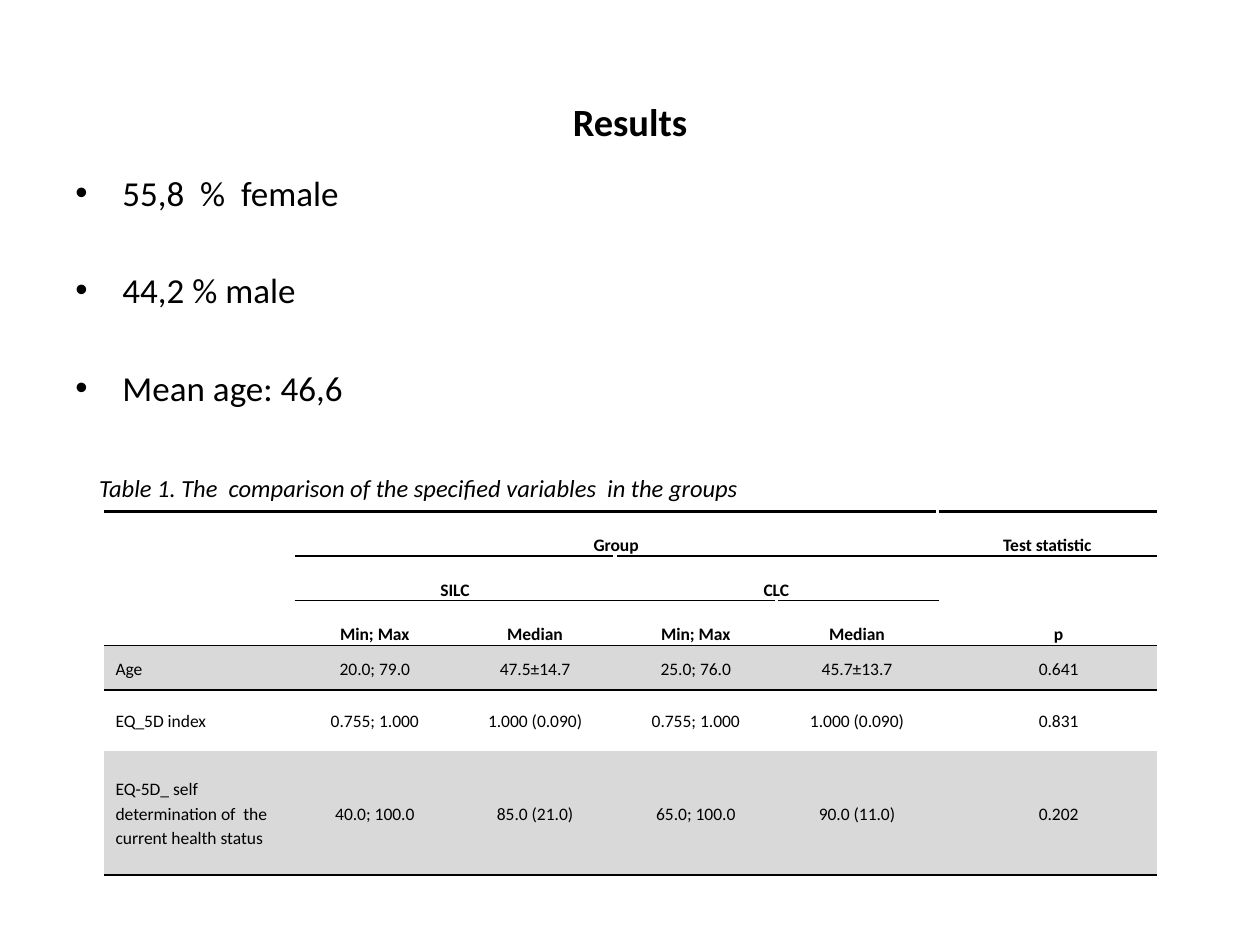
from lxml import etree
from pptx import Presentation
from pptx import util as u
from pptx.dml.color import RGBColor
from pptx.enum import text
from pptx.oxml.ns import qn

THEME = {
    "font": "Calibri",
    "ink": RGBColor.from_string("000000"),
    "band": RGBColor.from_string("D9D9D9"),
    "line": "000000",
    "gap": "FFFFFF",
    "title": u.Pt(22),
    "body": u.Pt(20),
    "caption": u.Pt(14),
    "cell": u.Pt(10),
}
NO_GRID_STYLE = "{2D5ABB26-0587-4C30-8999-92F81FD0307C}"

TITLE = "Results"
BULLETS = ["55,8  %  female", "44,2 % male", "Mean age: 46,6"]
CAPTION = "Table 1. The  comparison of the specified variables  in the groups"
ROWS = [
    ["", "Group", "", "", "", "Test statistic", ""],
    ["", "SILC", "", "CLC", "", "", "p"],
    ["", "Min; Max", "Median", "Min; Max", "Median", "", ""],
    ["Age", "20.0; 79.0", "47.5±14.7", "25.0; 76.0", "45.7±13.7", "", "0.641"],
    ["EQ_5D index", "0.755; 1.000", "1.000 (0.090)", "0.755; 1.000",
     "1.000 (0.090)", "", "0.831"],
    ["EQ-5D_ self determination of  the current health status", "40.0; 100.0",
     "85.0 (21.0)", "65.0; 100.0", "90.0 (11.0)", "", "0.202"],
]
HEADER_ROWS = 3
COLUMN_WIDTHS = [3.84, 3.23, 3.23, 3.25, 3.25, 0.46, 3.96]
ROW_HEIGHTS = [0.9, 0.9, 0.9, 0.9, 1.22, 2.51]
MERGES = [((0, 0), (2, 0)), ((0, 1), (0, 4)), ((0, 5), (0, 6)),
          ((1, 1), (1, 2)), ((1, 3), (1, 4)), ((1, 5), (2, 5)), ((1, 6), (2, 6))]
HORIZONTAL_RULES = [(0, 0, 6, 1.5), (1, 1, 6, 1), (2, 1, 4, 1), (3, 0, 6, 1), (6, 0, 6, 1.5)]
VERTICAL_GAPS = [(3, 1, 2, 2.25), (5, 0, 2, 2.25)]
BORDER_ORDER = ["lnL", "lnR", "lnT", "lnB"]


def apply(target, **values):
    for name, value in values.items():
        setattr(target, name, value)


def write(paragraph, words, size, bold=False, italic=False):
    run = paragraph.add_run()
    run.text = words
    apply(run.font, name=THEME["font"], size=size, bold=bold, italic=italic)
    run.font.color.rgb = THEME["ink"]


def indent(paragraph, left, first=0.0):
    properties = paragraph._p.get_or_add_pPr()
    properties.set("marL", str(u.Cm(left)))
    properties.set("indent", str(u.Cm(first)))
    return properties


def place(shape, left, top, width, height):
    apply(shape, left=u.Cm(left), top=u.Cm(top), width=u.Cm(width), height=u.Cm(height))


def add_title(slide):
    title = slide.shapes.title
    place(title, 1.27, 1.96, 22.86, 0.97)
    apply(title.text_frame, vertical_anchor=text.MSO_ANCHOR.MIDDLE,
          auto_size=text.MSO_AUTO_SIZE.NONE, word_wrap=True)
    paragraph = title.text_frame.paragraphs[0]
    paragraph.alignment = text.PP_ALIGN.CENTER
    write(paragraph, TITLE, THEME["title"], bold=True)


def add_body(slide):
    box = slide.shapes.add_textbox(u.Cm(1.27), u.Cm(3.33), u.Cm(22.86), u.Cm(15.39))
    frame = box.text_frame
    frame.word_wrap = True
    for index, words in enumerate(BULLETS):
        paragraph = frame.add_paragraph() if index else frame.paragraphs[0]
        paragraph.space_before = u.Pt(31.6 if index else 0)
        properties = indent(paragraph, 0.95, -0.95)
        etree.SubElement(properties, qn("a:buFont"), typeface="Arial")
        etree.SubElement(properties, qn("a:buChar"), char="•")
        write(paragraph, words, THEME["body"])
    caption = frame.add_paragraph()
    caption.space_before = u.Pt(37)
    indent(caption, 0.48)
    write(caption, CAPTION, THEME["caption"], italic=True)


def collect_borders():
    borders = {}
    last_row, last_column = len(ROWS), len(COLUMN_WIDTHS)
    for column, first, last, width in VERTICAL_GAPS:
        for row in range(first, last + 1):
            borders[row, column - 1, "lnR"] = borders[row, column, "lnL"] = (THEME["gap"], width)
    for edge, first, last, width in HORIZONTAL_RULES:
        for column in range(first, min(last + 1, last_column)):
            if edge < last_row:
                borders[edge, column, "lnT"] = (THEME["line"], width)
            if edge > 0:
                borders[edge - 1, column, "lnB"] = (THEME["line"], width)
    return borders


def draw_border(cell, side, color, width):
    properties = cell._tc.get_or_add_tcPr()
    line = etree.Element(qn("a:" + side), w=str(u.Pt(width)))
    fill = etree.SubElement(line, qn("a:solidFill"))
    etree.SubElement(fill, qn("a:srgbClr"), val=color)
    position = sum(child.tag in [qn("a:" + name) for name in BORDER_ORDER]
                   for child in properties)
    properties.insert(position, line)


def fill_cell(cell, row, column, words):
    header = row < HEADER_ROWS
    apply(cell, margin_left=u.Cm(0.18), margin_right=u.Cm(0.18), margin_top=0, margin_bottom=0,
          vertical_anchor=text.MSO_ANCHOR.BOTTOM if header else text.MSO_ANCHOR.MIDDLE)
    if not header and (row - HEADER_ROWS) % 2 == 0:
        cell.fill.solid()
        cell.fill.fore_color.rgb = THEME["band"]
    else:
        cell.fill.background()
    paragraph = cell.text_frame.paragraphs[0]
    paragraph.font.size = THEME["cell"]
    paragraph.line_spacing = 1.15
    if column:
        paragraph.alignment = text.PP_ALIGN.CENTER
    else:
        indent(paragraph, 0.05)
    if words:
        write(paragraph, words, THEME["cell"], bold=header)


def add_results_table(slide):
    frame = slide.shapes.add_table(len(ROWS), len(COLUMN_WIDTHS), u.Cm(2.1), u.Cm(10.31),
                                   u.Cm(sum(COLUMN_WIDTHS)), u.Cm(sum(ROW_HEIGHTS)))
    table = frame.table
    apply(table, first_row=False, horz_banding=False)
    table._tbl.tblPr.find(qn("a:tableStyleId")).text = NO_GRID_STYLE
    for column, width in zip(table.columns, COLUMN_WIDTHS):
        column.width = u.Cm(width)
    for row, height in zip(table.rows, ROW_HEIGHTS):
        row.height = u.Cm(height)
    for start, end in MERGES:
        table.cell(*start).merge(table.cell(*end))
    borders = collect_borders()
    for row, values in enumerate(ROWS):
        for column, words in enumerate(values):
            cell = table.cell(row, column)
            fill_cell(cell, row, column, words)
            for side in BORDER_ORDER:
                if (row, column, side) in borders:
                    draw_border(cell, side, *borders[row, column, side])


def main():
    presentation = Presentation()
    apply(presentation, slide_width=u.Cm(25.4), slide_height=u.Cm(19.05))
    slide = presentation.slides.add_slide(presentation.slide_layouts[5])
    add_title(slide)
    add_body(slide)
    add_results_table(slide)
    presentation.save("out.pptx")


if __name__ == "__main__":
    main()
